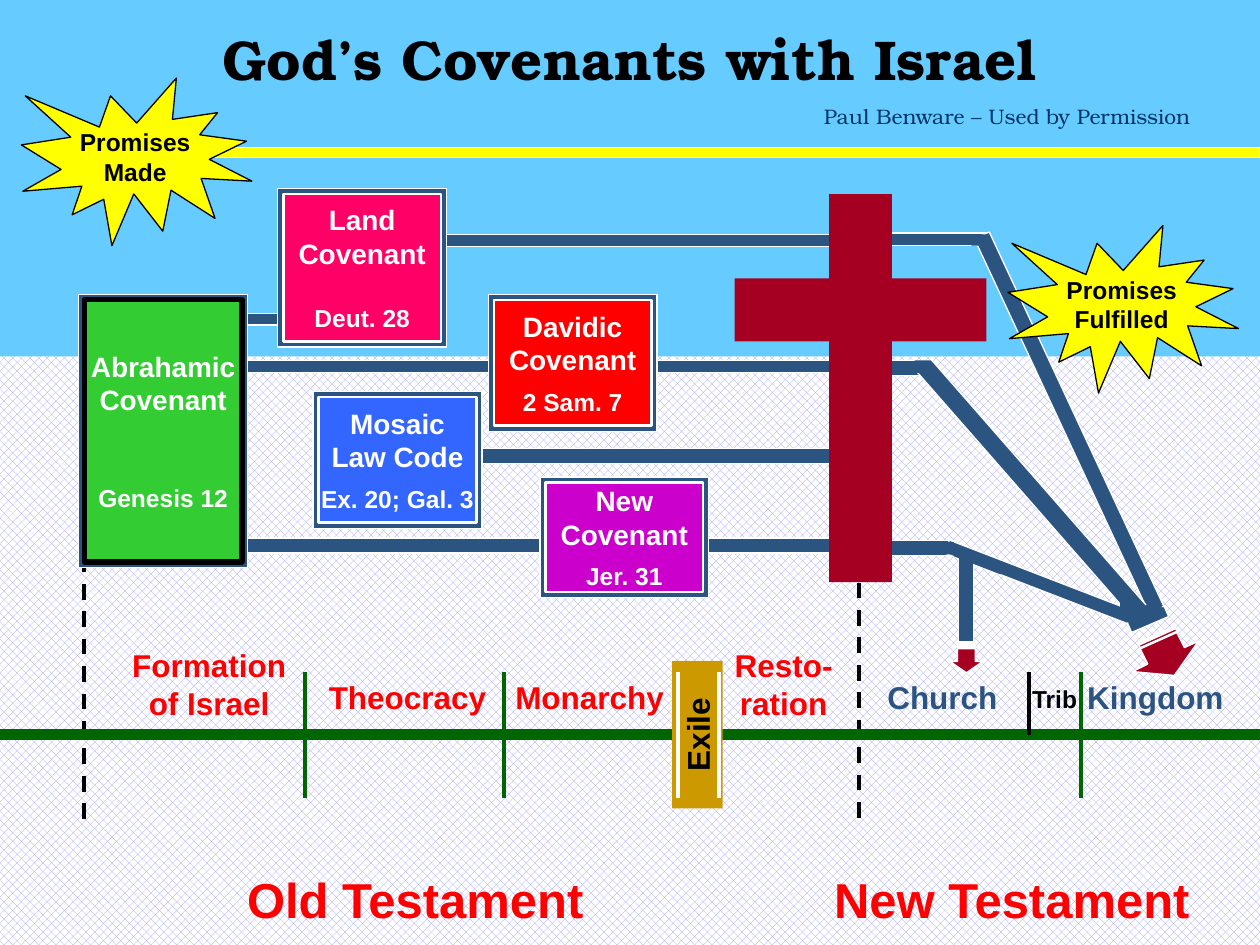
"""Build a one-slide timeline chart of the covenants with Israel."""
from lxml import etree
from pptx import Presentation
from pptx.dml.color import RGBColor
from pptx.enum.dml import MSO_LINE, MSO_PATTERN
from pptx.enum.shapes import MSO_CONNECTOR, MSO_SHAPE
from pptx.enum.text import MSO_ANCHOR, PP_ALIGN
from pptx.oxml.ns import qn
from pptx.util import Cm, Pt

RECT, SEAL = MSO_SHAPE.RECTANGLE, MSO_SHAPE.EXPLOSION1
STRAIGHT, DASH = MSO_CONNECTOR.STRAIGHT, MSO_LINE.DASH
LEFT, MID = PP_ALIGN.LEFT, PP_ALIGN.CENTER
TOP, HALF = MSO_ANCHOR.TOP, MSO_ANCHOR.MIDDLE
SANS, SERIF = "Arial", "TeX Gyre Bonum"
INCH = 2.54
RIM = 0.045

HUES = {
    "sky": "66CCFF", "steel": "2B5481", "white": "FFFFFF", "black": "000000",
    "wine": "A50021", "gold": "CC9900", "sun": "FFFF00", "red": "FF0000",
    "pine": "006600", "lime": "33CC33", "pink": "FF0066", "blue": "3366FF",
    "plum": "CC00CC", "navy": "003366", "lilac": "9999FF",
}

ROADS = [
    (7.03, 4.29, 0.55, 0.12, 0), (7.01, 2.86, 0.38, 0.12, 0),
    (7.02, 1.85, 0.82, 0.1, 0), (6.84, 3.3, 3.3, 0.13, 65),
    (6.88, 3.84, 2.68, 0.15, 48.8), (7.46, 4.58, 1.65, 0.11, 21.1),
    (8.95, 4.87, 0.32, 0.09, 336.7), (7.32, 4.69, 0.69, 0.12, 270),
    (1.9, 2.49, 0.5, 0.09, 0), (3.47, 1.86, 3.18, 0.1, 0),
    (1.77, 2.86, 5.01, 0.1, 0), (3.62, 3.56, 3.15, 0.12, 0),
    (1.86, 4.27, 4.91, 0.12, 0),
]
JOINTS = [
    (8.94, 4.85, 0.13, 0.09, 0), (8.89, 4.78, 0.13, 0.09, 0),
    (9.03, 4.86, 0.12, 0.08, 0), (9.11, 4.82, 0.12, 0.08, 0),
    (9.09, 4.8, 0.13, 0.09, 0), (7.44, 4.3, 0.13, 0.1, 0),
    (7.26, 2.86, 0.13, 0.1, 0), (7.71, 1.86, 0.13, 0.09, 0),
    (7.57, 4.41, 0.4, 0.08, 21.1),
]
ARROWS = [
    [[(9.51, 5.09), (9.4, 5.14), (9.34, 5.02), (9.05, 5.15), (9.11, 5.27),
      (8.99, 5.33), (9.32, 5.36)],
     [(9.33, 4.99), (9.04, 5.12), (9.05, 5.14), (9.34, 5.01)],
     [(9.32, 4.97), (9.03, 5.1), (9.03, 5.11), (9.32, 4.98)]],
    [[(7.8, 5.25), (7.74, 5.25), (7.74, 5.15), (7.6, 5.15), (7.6, 5.25),
      (7.54, 5.25), (7.67, 5.34)],
     [(7.74, 5.13), (7.6, 5.13), (7.6, 5.14), (7.74, 5.14)],
     [(7.74, 5.11), (7.6, 5.11), (7.6, 5.12), (7.74, 5.12)]],
]
LABELS = [
    ((0.95, 5.08, 1.42, 0.7), ["Formation", "of Israel"], 18, "red"),
    ((2.51, 5.33, 1.45, 0.4), ["Theocracy"], 18, "red"),
    ((3.99, 5.33, 1.38, 0.4), ["Monarchy"], 18, "red"),
    ((5.73, 5.08, 0.98, 0.7), ["Resto-", "ration"], 18, "red"),
    ((6.83, 5.33, 1.3, 0.4), ["Church"], 18, "steel"),
    ((8.02, 5.38, 0.7, 0.33), ["Trib"], 14, "black"),
    ((8.53, 5.33, 1.28, 0.4), ["Kingdom"], 18, "steel"),
    ((1.84, 6.85, 2.91, 0.57), ["Old Testament"], 28, "red"),
    ((6.5, 6.85, 3.06, 0.57), ["New Testament"], 28, "red"),
]
TICKS = [(2.42, "pine"), (4, "pine"), (5.38, "white"), (5.71, "white"),
         (8.58, "pine")]
CARDS = [
    ((0.67, 2.38, 1.25, 2.08), "lime", "black", 3, 38,
     ["Abrahamic", "Covenant", "Genesis 12"]),
    ((2.25, 1.54, 1.25, 1.17), "pink", "white", 1.5, 19,
     ["Land", "Covenant", "Deut. 28"]),
    ((2.53, 3.15, 1.25, 1), "blue", "white", 1.5, 6,
     ["Mosaic", "Law Code", "Ex. 20; Gal. 3"]),
    ((3.92, 2.38, 1.25, 1), "red", "white", 1.5, 6,
     ["Davidic", "Covenant", "2 Sam. 7"]),
    ((4.33, 3.83, 1.25, 0.87), "plum", "white", 1.5, 6,
     ["New", "Covenant", "Jer. 31"]),
]
SEALS = [((0.17, 0.62, 1.83, 1.33), ["Promises", "Made"]),
         ((8, 1.79, 1.83, 1.33), ["Promises", "Fulfilled"])]


def inch(val):
    return Cm(val * INCH)


def tint(name):
    return RGBColor.from_string(HUES[name])


def paint(shape, fill, line=None, width=0.75):
    shape.shadow.inherit = False
    shape.fill.solid()
    shape.fill.fore_color.rgb = tint(fill)
    if line:
        shape.line.color.rgb = tint(line)
        shape.line.width = Pt(width)
    else:
        shape.line.fill.background()


def block(box, fill, line=None, width=0.75, turn=0, kind=RECT):
    shape = shapes.add_shape(kind, *map(inch, box))
    shape.rotation = turn
    paint(shape, fill, line, width)
    return shape


def rule(start, end, hue, width, dash=None):
    line = shapes.add_connector(STRAIGHT, *map(inch, start + end))
    line.line.color.rgb = tint(hue)
    line.line.width = Pt(width)
    if dash:
        line.line.dash_style = dash
    etree.SubElement(line._element.spPr, qn("a:effectLst"))


def arrow(parts):
    first, *rest = [[(inch(x), inch(y)) for x, y in part] for part in parts]
    pen = shapes.build_freeform(*first[0])
    pen.add_line_segments(first[1:])
    for part in rest:
        pen.move_to(*part[0])
        pen.add_line_segments(part[1:])
    paint(pen.convert_to_shape(), "wine", "white")


def write(shape, lines, size=18, hue="black", font=SANS, bold=True,
          align=MID, anchor=TOP, wrap=False, last=None, gap=0):
    frame = shape.text_frame
    frame.word_wrap = wrap
    frame.vertical_anchor = anchor
    frame.text = "\n".join(lines)
    for para in frame.paragraphs:
        para.alignment = align
        para.font.name = font
        para.font.size = Pt(size)
        para.font.bold = bold
        para.font.color.rgb = tint(hue)
    if last:
        para.font.size = Pt(last)
        para.space_before = Pt(gap)


def label(box, lines, **form):
    write(shapes.add_textbox(*map(inch, box)), lines, **form)


deck = Presentation()
deck.slide_width, deck.slide_height = inch(10), inch(7.5)
slide = deck.slides.add_slide(deck.slide_layouts[6])
shapes = slide.shapes
back = slide.background.fill
back.patterned()
back.pattern = MSO_PATTERN.PERCENT_50
back.fore_color.rgb = tint("lilac")
back.back_color.rgb = tint("white")

block((0, 0, 10, 2.83), "sky")
for x, top, foot in [(6.82, 4.16, 6.49), (0.67, 4.17, 6.5)]:
    rule((x, foot), (x, top), "black", 2.25, DASH)
for *box, turn in ROADS:
    block(box, "steel", "white", turn=turn)
for *box, turn in JOINTS:
    block(box, "steel", turn=turn)
for parts in ARROWS:
    arrow(parts)

block((1.5, 1.17, 8.5, 0.08), "sun", "white")
label((0.5, 0, 9, 0.92), ["God’s Covenants with Israel"], size=32,
      font=SERIF, anchor=HALF, wrap=True)
rule((0, 5.83), (10, 5.83), "pine", 6)
for box, lines, size, hue in LABELS:
    label(box, lines, size=size, hue=hue)
write(block((4.95, 5.63, 1.17, 0.4), "gold", turn=270), ["Exile"], wrap=True)
for x, hue in TICKS:
    rule((x, 5.33), (x, 6.33), hue, 2.25)
rule((8.17, 5.33), (8.17, 5.83), "black", 2.25)

for box, fill, line, width, gap, lines in CARDS:
    x, y, w, h = box
    block((x - RIM, y - RIM, w + 2 * RIM, h + 2 * RIM), "steel", "white")
    write(block(box, fill, line, width), lines, size=16, hue="white",
          anchor=HALF, last=14, gap=gap)
block((6.58, 1.54, 0.5, 3.08), "wine")
block((6.58, 1.46, 0.5, 2), "wine", turn=270)
for box, lines in SEALS:
    write(block(box, "sun", "black", kind=SEAL), lines, size=14, anchor=HALF)
label((6.44, 0.77, 3.17, 0.3), ["Paul Benware – Used by Permission"],
      size=12, hue="navy", font=SERIF, bold=False, align=LEFT, wrap=True)

deck.save("out.pptx")
